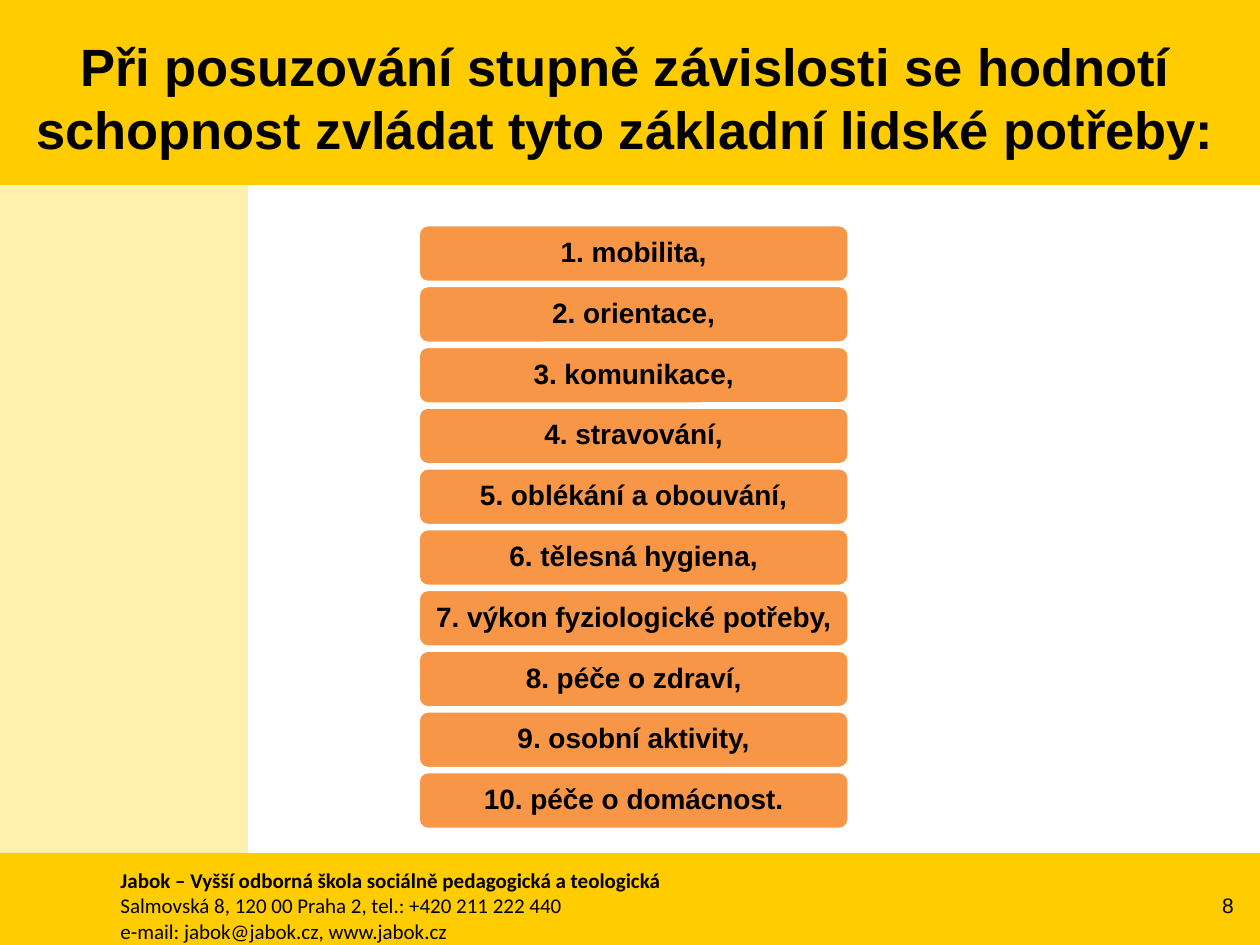
from pptx import Presentation
from pptx.dml.color import RGBColor as RGB
from pptx.enum.shapes import MSO_SHAPE as SHAPE
from pptx.enum.text import MSO_ANCHOR as ANCHOR, PP_ALIGN as ALIGN
from pptx.util import Cm, Pt

COLORS = {
    "band": "FFCC00",
    "side": "FFF0AF",
    "item": "F79646",
    "edge": "FFFFFF",
    "text": "000000",
}
WIDTH, HEIGHT = 25.4, 19.05
TITLE = "Při posuzování stupně závislosti se hodnotí schopnost zvládat tyto základní lidské potřeby:"
NEEDS = [
    "mobilita", "orientace", "komunikace", "stravování",
    "oblékání a obouvání", "tělesná hygiena",
    "výkon fyziologické potřeby", "péče o zdraví",
    "osobní aktivity", "péče o domácnost",
]
SCHOOL = [
    "Jabok – Vyšší odborná škola sociálně pedagogická a teologická",
    "Salmovská 8, 120 00 Praha 2, tel.: +420 211 222 440",
    "e-mail: jabok@jabok.cz, www.jabok.cz",
]


def color(name):
    return RGB.from_string(COLORS[name])


def style(par, size, font="Arial", bold=False, align=ALIGN.LEFT):
    par.alignment = align
    for run in par.runs:
        run.font.size = Pt(size)
        run.font.name = font
        run.font.bold = bold
        run.font.color.rgb = color("text")


def add_box(slide, kind, fill, box):
    shape = slide.shapes.add_shape(kind, *map(Cm, box))
    shape.shadow.inherit = False
    shape.fill.solid()
    shape.fill.fore_color.rgb = color(fill)
    shape.line.fill.background()
    return shape


def add_text(slide, text, box):
    frame = slide.shapes.add_textbox(*map(Cm, box)).text_frame
    frame.word_wrap = True
    frame.text = text
    return frame


def add_title(slide, box):
    left, top, width, height = box
    add_box(slide, SHAPE.RECTANGLE, "band", box)
    title = slide.shapes.title
    title.left, title.top = Cm(left + 0.3), Cm(top + 0.36)
    title.width, title.height = Cm(width - 0.78), Cm(height - 0.55)
    # The placeholder comes first in the tree, so raise it above the band.
    title.element.getparent().append(title.element)
    frame = title.text_frame
    frame.text = TITLE
    frame.word_wrap = True
    frame.vertical_anchor = ANCHOR.MIDDLE
    style(frame.paragraphs[0], 30, bold=True, align=ALIGN.CENTER)


def add_footer(slide, box):
    left, top, width, height = box
    add_box(slide, SHAPE.RECTANGLE, "band", box)
    school = add_text(slide, "\n".join(SCHOOL), (left + 2.18, top + 0.17, 20.8, 1.8))
    for i, par in enumerate(school.paragraphs):
        style(par, 12, "Calibri", bold=i == 0)
    number = add_text(slide, "8", (left + width - 1.88, top + 0.53, 1.6, 1.02))
    number.vertical_anchor = ANCHOR.MIDDLE
    style(number.paragraphs[0], 12, align=ALIGN.RIGHT)


def add_needs(slide, box, gap=0.06):
    """Stack the numbered needs evenly in the box."""
    left, top, width, height = box
    step = (height + gap) / len(NEEDS)
    for i, need in enumerate(NEEDS):
        item = add_box(slide, SHAPE.ROUNDED_RECTANGLE, "item",
                       (left, top + i * step, width, step - gap))
        item.line.color.rgb = color("edge")
        item.line.width = Pt(2)
        frame = item.text_frame
        frame.word_wrap = True
        frame.vertical_anchor = ANCHOR.MIDDLE
        frame.margin_left = frame.margin_right = Cm(0.18)
        frame.margin_top = frame.margin_bottom = Cm(0.08)
        end = "." if i == len(NEEDS) - 1 else ","
        frame.text = f"{i + 1}. {need}{end}"
        par = frame.paragraphs[0]
        par.line_spacing = 0.9
        style(par, 16, bold=True, align=ALIGN.CENTER)


def main():
    deck = Presentation()
    deck.slide_width, deck.slide_height = Cm(WIDTH), Cm(HEIGHT)
    slide = deck.slides.add_slide(deck.slide_layouts[5])
    head, foot = 3.73, 17.2
    add_box(slide, SHAPE.RECTANGLE, "side", (0, head, 5, foot - head))
    add_title(slide, (0, 0, WIDTH, head))
    add_footer(slide, (0, foot, WIDTH, HEIGHT - foot))
    add_needs(slide, (8.43, 4.53, 8.69, 12.19))
    deck.save("out.pptx")


if __name__ == "__main__":
    main()
